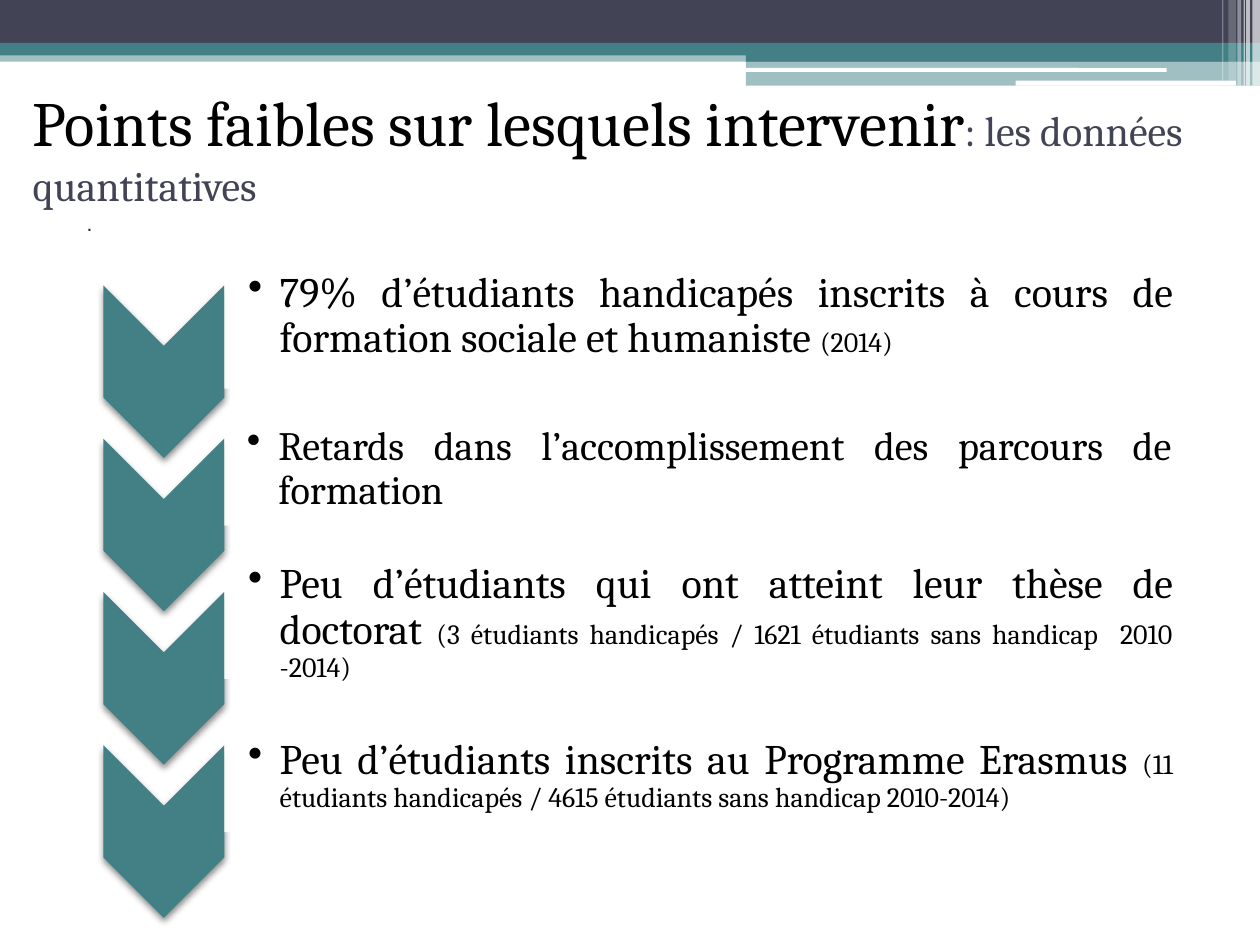
from dataclasses import dataclass

from lxml import etree
from pptx import Presentation
from pptx.dml.color import RGBColor
from pptx.enum.shapes import MSO_SHAPE
from pptx.enum.text import MSO_ANCHOR, PP_ALIGN
from pptx.oxml.ns import qn
from pptx.util import Inches, Pt

RECTANGLE = MSO_SHAPE.RECTANGLE
ROUNDED = MSO_SHAPE.ROUNDED_RECTANGLE
CHEVRON = MSO_SHAPE.CHEVRON
PANEL = MSO_SHAPE.ROUND_2_SAME_RECTANGLE
MIDDLE = MSO_ANCHOR.MIDDLE
JUSTIFY = PP_ALIGN.JUSTIFY

COLORS = {
    "navy": "424456",
    "teal": "438086",
    "white": "FFFFFF",
    "black": "000000",
    "gray": "222222",
}


@dataclass
class Band:
    left: float
    top: float
    width: float
    height: float
    color: str
    opacity: int = 100
    kind: int = RECTANGLE


@dataclass
class Run:
    text: str
    size: int
    color: str = "black"
    font: str = "Cambria"


@dataclass
class Item:
    panel_height: float
    runs: list[Run]
    left_inset: float = 0.19


BANDS = [
    Band(0, 0.4, 10, 0.09, "teal", 50),
    Band(0, 0, 10, 0.34, "navy"),
    Band(0, 0.34, 10, 0.1, "teal"),
    Band(5.92, 0.39, 4.08, 0.1, "teal"),
    Band(5.92, 0.48, 4.08, 0.2, "teal", 50),
    Band(5.91, 0.54, 3.35, 0.03, "white", kind=ROUNDED),
    Band(8.06, 0.64, 1.75, 0.04, "white", kind=ROUNDED),
    Band(9.94, 0, 0.06, 0.68, "white", 65),
    Band(9.89, 0, 0.03, 0.68, "white", 65),
    Band(9.87, 0, 0.01, 0.68, "white", 60),
    Band(9.82, 0, 0.03, 0.68, "white", 40),
    Band(9.75, 0, 0.06, 0.64, "white", 20),
    Band(9.7, 0, 0.01, 0.64, "white", 30),
]

ITEMS = [
    Item(1.15, [
        Run("79% d’étudiants handicapés inscrits à cours de formation sociale et humaniste ", 24),
        Run("(2014)", 16),
    ]),
    Item(0.89, [
        Run("Retards dans l’accomplissement des parcours de formation ", 23),
    ], 0.18),
    Item(0.89, [
        Run("Peu d’étudiants qui ont atteint leur thèse de doctorat ", 24),
        Run("(3 étudiants handicapés / 1621 étudiants sans handicap  2010 -2014)", 16),
    ]),
    Item(0.89, [
        Run("Peu d’étudiants inscrits au Programme Erasmus ", 24),
        Run("(11 étudiants handicapés / 4615 étudiants sans handicap 2010-2014)", 16),
    ]),
]

FIRST_CENTER = 2.51
ROW_PITCH = 3.65 / 3
CHEVRON_OFFSET = 0.44


def add_block(slide, band: Band):
    shape = slide.shapes.add_shape(band.kind, Inches(band.left), Inches(band.top),
                                   Inches(band.width), Inches(band.height))
    shape.shadow.inherit = False
    shape.line.fill.background()
    shape.fill.solid()
    shape.fill.fore_color.rgb = RGBColor.from_string(COLORS[band.color])
    if band.opacity < 100:
        color = shape.fill._xPr.find(qn("a:solidFill"))[0]
        etree.SubElement(color, qn("a:alpha"), val=str(band.opacity * 1000))
    return shape


def add_rotated(slide, kind: int, center_x: float, center_y: float,
                length: float, thickness: float, color: str, opacity: int = 100):
    shape = add_block(slide, Band(center_x - length / 2, center_y - thickness / 2,
                                  length, thickness, color, opacity, kind))
    shape.rotation = 90
    return shape


def add_shadow(shape) -> None:
    effects = shape._element.spPr.find(qn("a:effectLst"))
    shadow = etree.SubElement(effects, qn("a:outerShdw"), blurRad=str(Pt(4)),
                              dist=str(Pt(2)), dir="5400000", rotWithShape="0")
    color = etree.SubElement(shadow, qn("a:srgbClr"), val=COLORS["black"])
    etree.SubElement(color, qn("a:alpha"), val="45000")


def add_text(slide, left: float, top: float, width: float, height: float, runs: list[Run]):
    box = slide.shapes.add_textbox(Inches(left), Inches(top), Inches(width), Inches(height))
    box.text_frame.word_wrap = True
    paragraph = box.text_frame.paragraphs[0]
    for part in runs:
        run = paragraph.add_run()
        run.text = part.text
        run.font.size = Pt(part.size)
        run.font.name = part.font
        run.font.color.rgb = RGBColor.from_string(COLORS[part.color])
    return box


def add_item(slide, item: Item, center: float) -> None:
    chevron = add_rotated(slide, CHEVRON, 1.3, center + CHEVRON_OFFSET, 1.37, 0.96, "teal")
    add_shadow(chevron)
    add_rotated(slide, PANEL, 5.58, center, item.panel_height, 7.6, "white", 90)

    height = item.panel_height - 0.1
    frame = add_text(slide, 1.78, center - height / 2, 7.55, height, item.runs).text_frame
    frame.vertical_anchor = MIDDLE
    frame.margin_left = Inches(item.left_inset)
    frame.margin_top = frame.margin_right = frame.margin_bottom = Inches(0.02)

    # Hanging bullet
    paragraph = frame.paragraphs[0]
    paragraph.alignment = JUSTIFY
    paragraph.line_spacing = 0.9
    properties = paragraph._p.get_or_add_pPr()
    properties.set("marL", str(Inches(0.25)))
    properties.set("indent", str(-Inches(0.25)))
    etree.SubElement(properties, qn("a:buChar"), char="•")


def main() -> None:
    presentation = Presentation()
    presentation.slide_width = Inches(10)
    presentation.slide_height = Inches(7.5)
    slide = presentation.slides.add_slide(presentation.slide_layouts[6])

    # Header decoration
    for band in BANDS:
        add_block(slide, band)

    # Chevron list
    for index, item in enumerate(ITEMS):
        add_item(slide, item, FIRST_CENTER + index * ROW_PITCH)

    # Small text and title
    add_text(slide, 0.59, 1.62, 8.83, 0.3, [Run(".", 12, "gray", "Arial")])
    title = add_text(slide, 0.16, 0.7, 9.65, 0.93, [
        Run("Points faibles sur lesquels intervenir", 36),
        Run(": les données quantitatives", 24, "navy"),
    ])
    title.text_frame.vertical_anchor = MIDDLE

    presentation.save("out.pptx")


if __name__ == "__main__":
    main()
